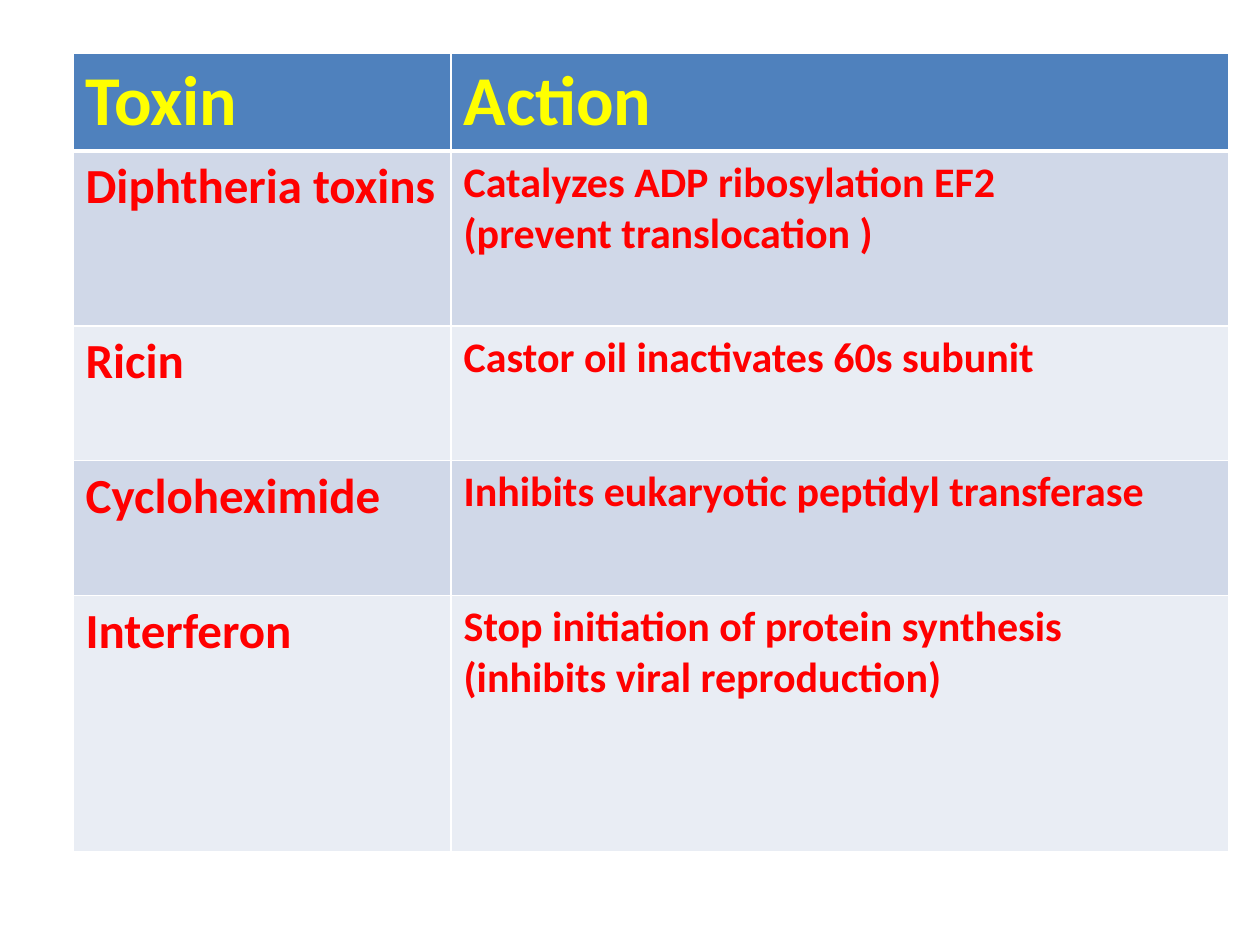
from lxml.etree import SubElement
from pptx import Presentation
from pptx.dml.color import RGBColor
from pptx.oxml.ns import qn
from pptx.util import Inches, Pt


def color(hex_value):
    return RGBColor.from_string(hex_value)


def add_borders(cell, bottom_width):
    """Draw white lines round a cell; call before setting its fill."""
    properties = cell._tc.get_or_add_tcPr()
    for side, width in (("lnL", 1), ("lnR", 1), ("lnT", 1), ("lnB", bottom_width)):
        line = SubElement(properties, qn(f"a:{side}"), w=str(Pt(width)))
        fill = SubElement(line, qn("a:solidFill"))
        SubElement(fill, qn("a:srgbClr"), val="FFFFFF")


presentation = Presentation()
presentation.slide_width = Inches(10)
presentation.slide_height = Inches(7.5)
slide = presentation.slides.add_slide(presentation.slide_layouts[6])

# Toxins and what they do; a line break starts a new paragraph
toxin_rows = [
    ("Toxin", "Action"),
    ("Diphtheria toxins", "Catalyzes ADP ribosylation EF2\n(prevent translocation )"),
    ("Ricin", "Castor oil inactivates 60s subunit"),
    ("Cycloheximide", "Inhibits eukaryotic peptidyl transferase"),
    ("Interferon", "Stop initiation of protein synthesis\n(inhibits viral reproduction)"),
]
column_widths = [3, 6.17]
row_heights = [0.77, 1.39, 1.07, 1.07, 2.03]

# Table grid
table = slide.shapes.add_table(
    len(toxin_rows), len(column_widths), Inches(0.58), Inches(0.42),
    Inches(sum(column_widths)), Inches(sum(row_heights)),
).table
for column, width in zip(table.columns, column_widths):
    column.width = Inches(width)
for row, height in zip(table.rows, row_heights):
    row.height = Inches(height)

# Cells: a blue header above banded rows
for row_index, texts in enumerate(toxin_rows):
    is_header = row_index == 0
    if is_header:
        fill_color, text_color, sizes = "4F81BD", "FFFF00", (40, 40)
    else:
        fill_color = "D0D8E8" if row_index % 2 else "E9EDF4"
        text_color, sizes = "FF0000", (28, 24)
    for column_index, (text, size) in enumerate(zip(texts, sizes)):
        cell = table.cell(row_index, column_index)
        add_borders(cell, bottom_width=3 if is_header else 1)
        cell.fill.solid()
        cell.fill.fore_color.rgb = color(fill_color)
        cell.text = text
        for paragraph in cell.text_frame.paragraphs:
            paragraph.font.name = "Calibri"
            paragraph.font.size = Pt(size)
            paragraph.font.bold = True
            paragraph.font.color.rgb = color(text_color)

presentation.save("out.pptx")
